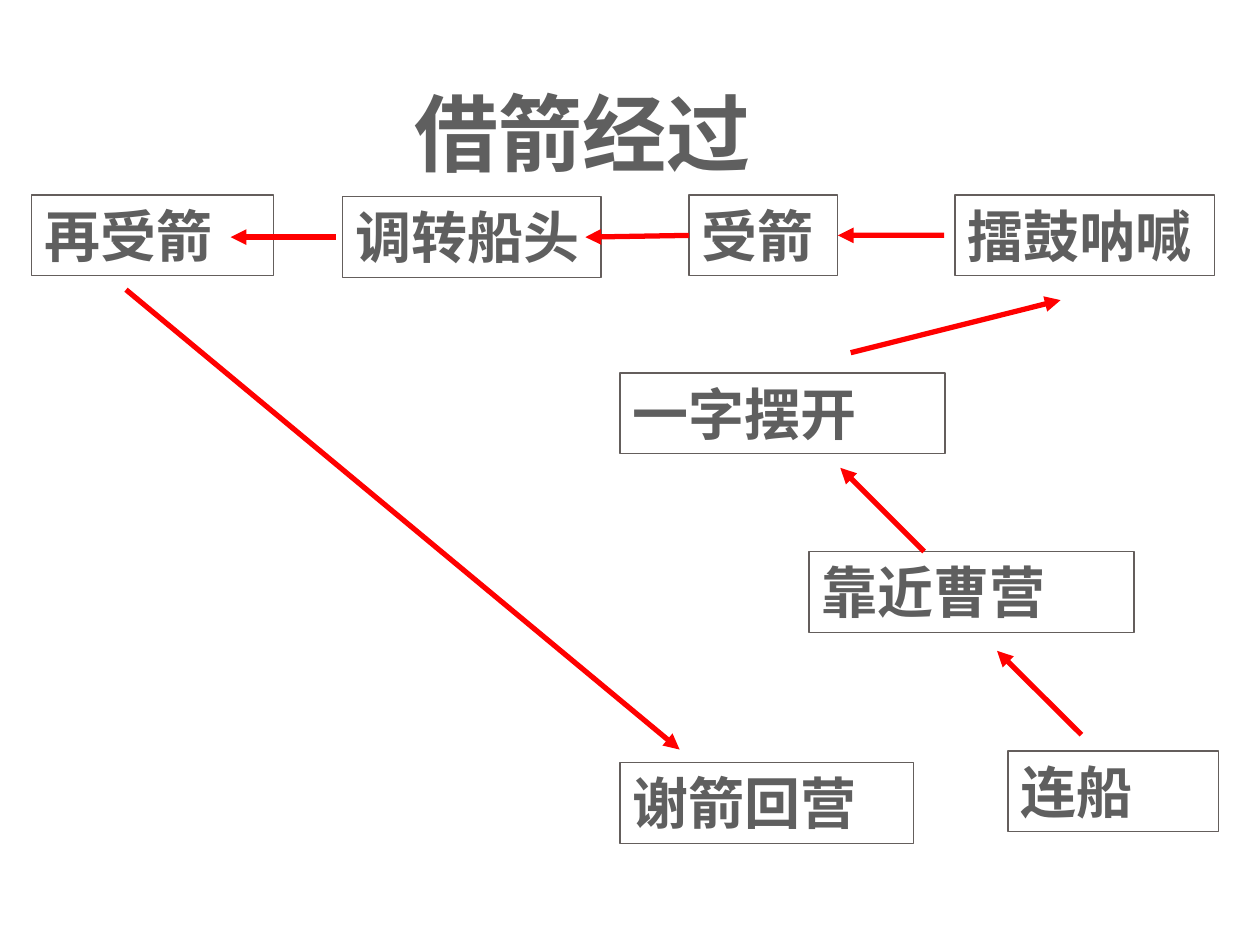
"""Build the flow slide on how the arrows were borrowed."""
from lxml import etree
from pptx import Presentation
from pptx.dml.color import RGBColor
from pptx.enum.shapes import MSO_CONNECTOR, MSO_SHAPE
from pptx.enum.text import MSO_ANCHOR, MSO_AUTO_SIZE, PP_ALIGN
from pptx.oxml.ns import qn
from pptx.util import Cm, Pt

RECTANGLE = MSO_SHAPE.RECTANGLE
STRAIGHT = MSO_CONNECTOR.STRAIGHT
TOP = MSO_ANCHOR.TOP
LEFT = PP_ALIGN.LEFT
GROW = MSO_AUTO_SIZE.SHAPE_TO_FIT_TEXT
LEFT_SIDE, RIGHT_SIDE = 1, 3

FONT = "Times New Roman"
TEXT_COLOR, BORDER_COLOR, ARROW_COLOR = "5F5F5F", "645E5C", "FF0000"
STEP_HEIGHT = 1.63

TITLE = ("借箭经过", 8.1, 1.52, 8.03, 2.29)
STEPS = [
    ("连船", 20.32, 15.14, 4.24),
    ("靠近曹营", 16.31, 11.12, 6.55),
    ("一字摆开", 12.5, 7.52, 6.55),
    ("擂鼓呐喊", 19.25, 3.93, 5.23),
    ("受箭", 13.89, 3.93, 3.0),
    ("调转船头", 6.91, 3.96, 5.21),
    ("再受箭", 0.64, 3.93, 4.88),
    ("谢箭回营", 12.5, 15.37, 5.92),
]
ARROWS = [
    ((21.8, 14.81), (20.1, 13.12)),
    ((18.63, 11.12), (16.94, 9.43)),
    ((17.15, 7.11), (21.38, 6.05)),
    ((19.03, 4.74), ("受箭", RIGHT_SIDE)),
    (("受箭", LEFT_SIDE), (11.8, 4.78)),
    ((6.77, 4.78), (4.65, 4.78)),
    ((2.54, 5.84), (13.7, 15.11)),
]


def rgb(value):
    return RGBColor.from_string(value)


def write(shape, text, *, size, color=TEXT_COLOR, bold=True):
    frame = shape.text_frame
    frame.word_wrap = True
    frame.auto_size = GROW
    frame.vertical_anchor = TOP
    paragraph = frame.paragraphs[0]
    paragraph.alignment = LEFT
    run = paragraph.add_run()
    run.text = text
    run.font.name = FONT
    run.font.size = Pt(size)
    run.font.bold = bold
    run.font.color.rgb = rgb(color)


def add_step(slide, text, left, top, width):
    step = slide.shapes.add_shape(
        RECTANGLE, Cm(left), Cm(top), Cm(width), Cm(STEP_HEIGHT))
    step.shadow.inherit = False
    step.fill.background()
    step.line.color.rgb = rgb(BORDER_COLOR)
    step.line.width = Pt(0.75)
    write(step, text, size=32)
    return step


def add_arrow(slide, start, end, steps):
    arrow = slide.shapes.add_connector(STRAIGHT, 0, 0, 0, 0)
    if start[0] in steps:
        arrow.begin_connect(steps[start[0]], start[1])
    else:
        arrow.begin_x, arrow.begin_y = map(Cm, start)
    if end[0] in steps:
        arrow.end_connect(steps[end[0]], end[1])
    else:
        arrow.end_x, arrow.end_y = map(Cm, end)
    arrow.line.color.rgb = rgb(ARROW_COLOR)
    arrow.line.width = Pt(3)
    etree.SubElement(arrow.line._get_or_add_ln(), qn("a:tailEnd"), type="triangle")
    etree.SubElement(arrow._element.spPr, qn("a:effectLst"))


def main():
    deck = Presentation()
    deck.slide_width, deck.slide_height = Cm(25.4), Cm(19.05)
    slide = deck.slides.add_slide(deck.slide_layouts[6])
    title, *place = TITLE
    write(slide.shapes.add_textbox(*map(Cm, place)), title, size=48)
    steps = {step[0]: add_step(slide, *step) for step in STEPS}
    for start, end in ARROWS:
        add_arrow(slide, start, end, steps)
    deck.save("out.pptx")


if __name__ == "__main__":
    main()
